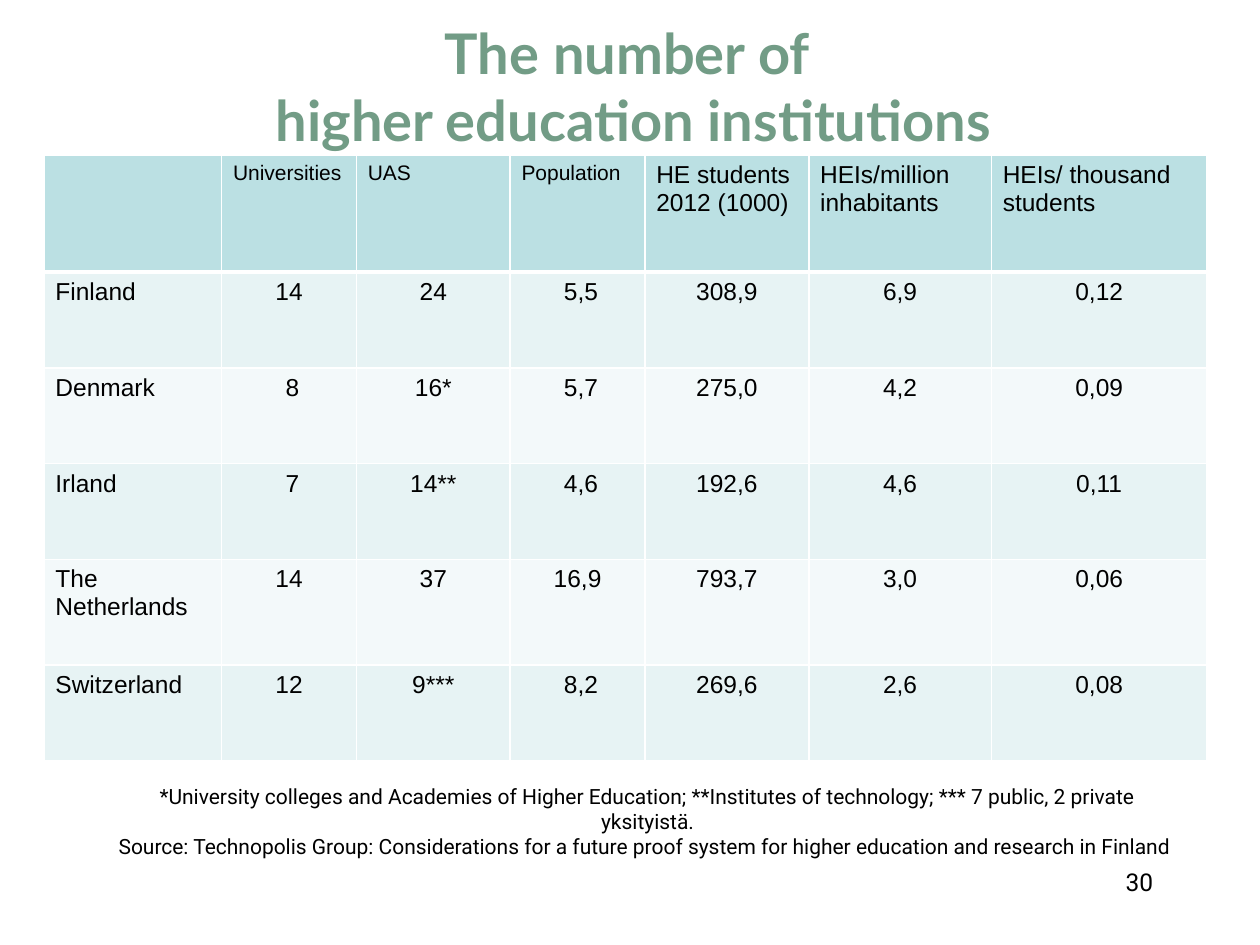
from lxml import etree
from pptx import Presentation
from pptx.dml.color import RGBColor
from pptx.enum import text
from pptx.oxml import ns
from pptx.util import Inches, Pt

GREEN = RGBColor(0x72, 0x9C, 0x86)
BLACK = RGBColor(0x00, 0x00, 0x00)
WHITE = RGBColor(0xFF, 0xFF, 0xFF)
HEADER = RGBColor(0xBB, 0xE0, 0xE3)
BANDS = [RGBColor(0xF3, 0xF9, 0xFA), RGBColor(0xE7, 0xF3, 0xF4)]
LEFT, CENTER, RIGHT = text.PP_ALIGN.LEFT, text.PP_ALIGN.CENTER, text.PP_ALIGN.RIGHT


def write(paragraph, words, size, font, align, color=BLACK, bold=False):
    paragraph.alignment = align
    run = paragraph.add_run()
    run.text = words
    run.font.size = Pt(size)
    run.font.name = font
    run.font.bold = bold
    run.font.color.rgb = color


def add_border(cell, side, width):
    line = etree.SubElement(cell._tc.get_or_add_tcPr(), ns.qn(f"a:ln{side}"), w=str(Pt(width)))
    fill = etree.SubElement(line, ns.qn("a:solidFill"))
    etree.SubElement(fill, ns.qn("a:srgbClr"), val=str(WHITE))


prs = Presentation()
prs.slide_width, prs.slide_height = Inches(10), Inches(7.5)
slide = prs.slides.add_slide(prs.slide_layouts[6])

title = slide.shapes.add_textbox(Inches(0.78), Inches(0.21), Inches(8.5), Inches(0.94)).text_frame
title.word_wrap = True
title.vertical_anchor = text.MSO_ANCHOR.MIDDLE
heading = title.paragraphs[0]
write(heading, "The number of ", 32, "Lato", CENTER, GREEN, True)
heading.add_line_break()
write(heading, "higher education institutions", 32, "Lato", CENTER, GREEN, True)

rows = [
    ["", "Universities", "UAS", "Population", "HE students 2012 (1000)",
     "HEIs/million inhabitants", "HEIs/ thousand students"],
    ["Finland", "14", "24", " 5,5", "308,9", "6,9", "0,12"],
    ["Denmark", " 8", "16*", " 5,7", "275,0", "4,2", "0,09"],
    ["Irland", " 7", "14**", " 4,6", "192,6", "4,6", "0,11"],
    ["The Netherlands", "14", "37", "16,9", "793,7", "3,0", "0,06"],
    ["Switzerland", "12", "9***", " 8,2", "269,6", "2,6", "0,08"],
]
widths = [1.41, 1.07, 1.22, 1.07, 1.3, 1.45, 1.71]
heights = [0.93, 0.76, 0.76, 0.76, 0.84, 0.76]
institutions = slide.shapes.add_table(
    len(rows), len(widths), Inches(0.35), Inches(1.23), Inches(9.21), Inches(4.8)).table
for column, width in zip(institutions.columns, widths):
    column.width = Inches(width)
for r, (values, height) in enumerate(zip(rows, heights)):
    institutions.rows[r].height = Inches(height)
    for c, value in enumerate(values):
        cell = institutions.cell(r, c)
        cell.margin_left = cell.margin_right = Inches(0.09)
        cell.margin_top = cell.margin_bottom = Inches(0.05)
        for side in "LRTB":
            header_rule = (r, side) in [(0, "B"), (1, "T")]
            add_border(cell, side, 3 if header_rule else 1)
        cell.fill.solid()
        cell.fill.fore_color.rgb = BANDS[r % 2] if r else HEADER
        if value:
            size = 12 if r == 0 and c < 4 else 14
            write(cell.text_frame.paragraphs[0], value, size, "Arial", CENTER if r and c else LEFT)

page = slide.shapes.add_textbox(Inches(7.17), Inches(6.83), Inches(2.08), Inches(0.5)).text_frame
page.word_wrap = True
write(page.paragraphs[0], "30", 14, "Roboto", RIGHT)

notes = slide.shapes.add_textbox(Inches(0.78), Inches(6.17), Inches(8.72), Inches(0.5)).text_frame
notes.word_wrap = True
notes.auto_size = text.MSO_AUTO_SIZE.SHAPE_TO_FIT_TEXT
write(notes.paragraphs[0],
      "*University colleges and Academies of Higher Education; **Institutes of technology; "
      "*** 7 public, 2 private yksityistä.", 12, "Roboto", CENTER)
write(notes.add_paragraph(),
      "Source: Technopolis Group: Considerations for a future proof system for higher education "
      "and research in Finland ", 12, "Roboto", CENTER)

prs.save("out.pptx")
